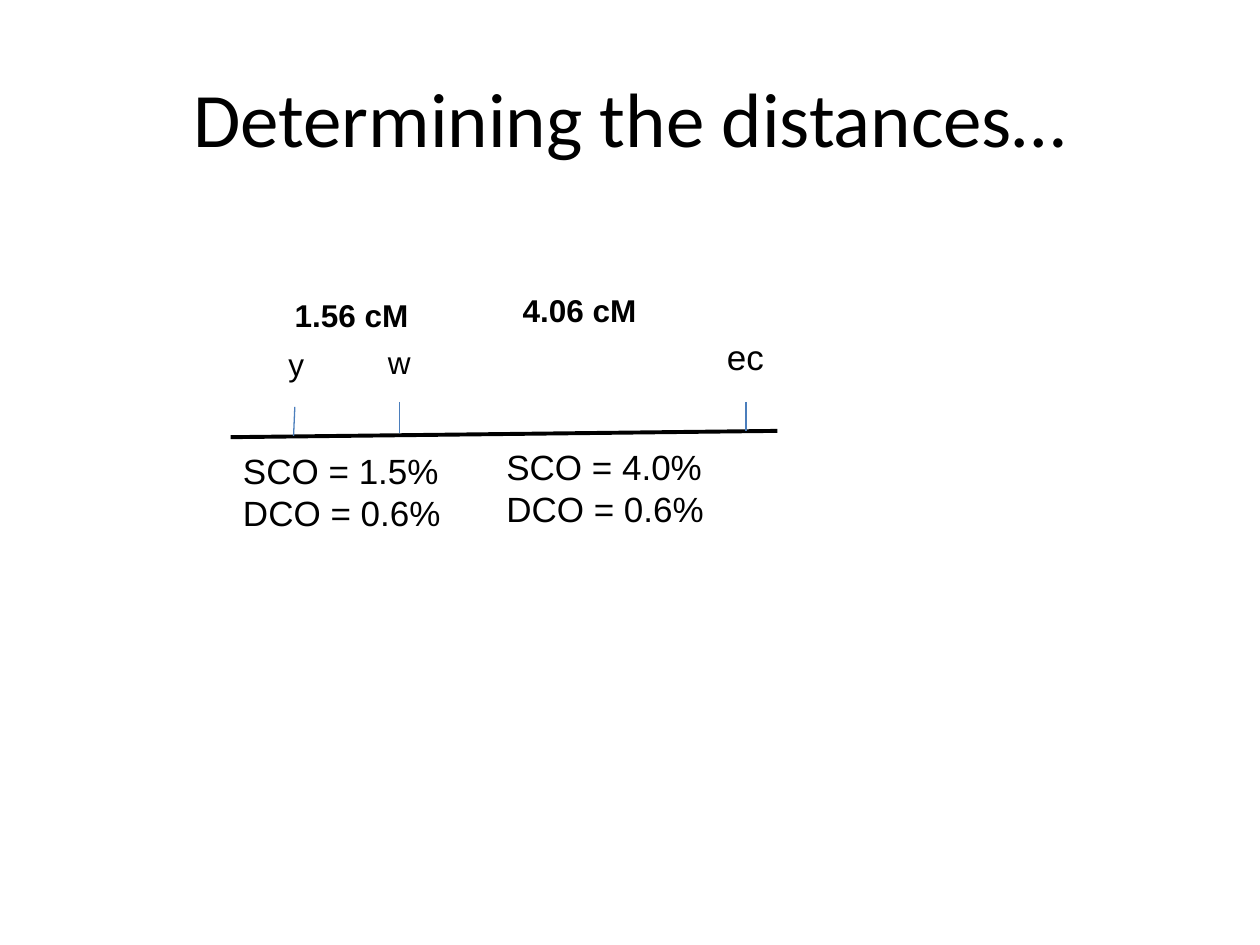
from pptx import Presentation
from pptx import util as u
from pptx.dml.color import RGBColor
from pptx.enum import shapes, text
from lxml import etree

INK = {"text": "000000", "map": "000000", "tick": "4B7EBC"}

TITLE = ("Determining the distances…", (0.5, 0.3, 9, 1.25))

# Chromosome line and gene ticks: start, end, colour, width
LINES = [
    ((1.83, 3.47), (6.17, 3.42), "map", 2.25),
    ((2.34, 3.23), (2.33, 3.46), "tick", 0.75),
    ((3.17, 3.19), (3.17, 3.44), "tick", 0.75),
    ((5.92, 3.19), (5.92, 3.42), "tick", 0.75),
]

# Labels: lines of text, box, size, bold, wrap
GENES = [
    (["y"], (2.19, 2.69, 0.28, 0.4), 18, False, True),
    (["w"], (2.98, 2.67, 0.38, 0.4), 18, False, False),
    (["ec"], (5.67, 2.61, 0.5, 0.44), 20, False, False),
]
RATES = [
    (["SCO = 1.5%", "DCO = 0.6%"], (1.83, 3.52, 1.78, 1.11), 20, False, True),
    (["SCO = 4.0%", "DCO = 0.6%"], (3.92, 3.49, 1.86, 1.11), 20, False, True),
]
GAPS = [
    (["1.56 cM"], (2.24, 2.3, 1.11, 0.71), 18, True, False),
    (["4.06 cM"], (4.05, 2.26, 1.53, 0.71), 18, True, True),
]


def color(name):
    return RGBColor.from_string(INK[name])


def add_text(slide, lines, box, size, bold=False, wrap=True, font="Arial"):
    frame = slide.shapes.add_textbox(*map(u.Inches, box)).text_frame
    frame.word_wrap = wrap
    frame.text = "\n".join(lines)
    for par in frame.paragraphs:
        for run in par.runs:
            run.font.name = font
            run.font.size = u.Pt(size)
            run.font.bold = bold
            run.font.color.rgb = color("text")
    return frame


def add_line(slide, start, end, ink, width):
    line = slide.shapes.add_connector(
        shapes.MSO_CONNECTOR.STRAIGHT, *map(u.Inches, start + end))
    line.line.color.rgb = color(ink)
    line.line.width = u.Pt(width)
    props = line.line._get_or_add_ln().getparent()
    space = "http://schemas.openxmlformats.org/drawingml/2006/main"
    etree.SubElement(props, f"{{{space}}}effectLst")


def main():
    deck = Presentation()
    deck.slide_width, deck.slide_height = u.Inches(10), u.Inches(7.5)
    slide = deck.slides.add_slide(deck.slide_layouts[6])

    # Title
    words, box = TITLE
    frame = add_text(slide, [words], box, 44, font="Calibri")
    frame.vertical_anchor = text.MSO_ANCHOR.MIDDLE
    frame.paragraphs[0].alignment = text.PP_ALIGN.CENTER

    # Gene map
    for line in LINES:
        add_line(slide, *line)

    # Gene names, crossover rates and map distances
    for label in GENES + RATES + GAPS:
        add_text(slide, *label)

    deck.save("out.pptx")


if __name__ == "__main__":
    main()
